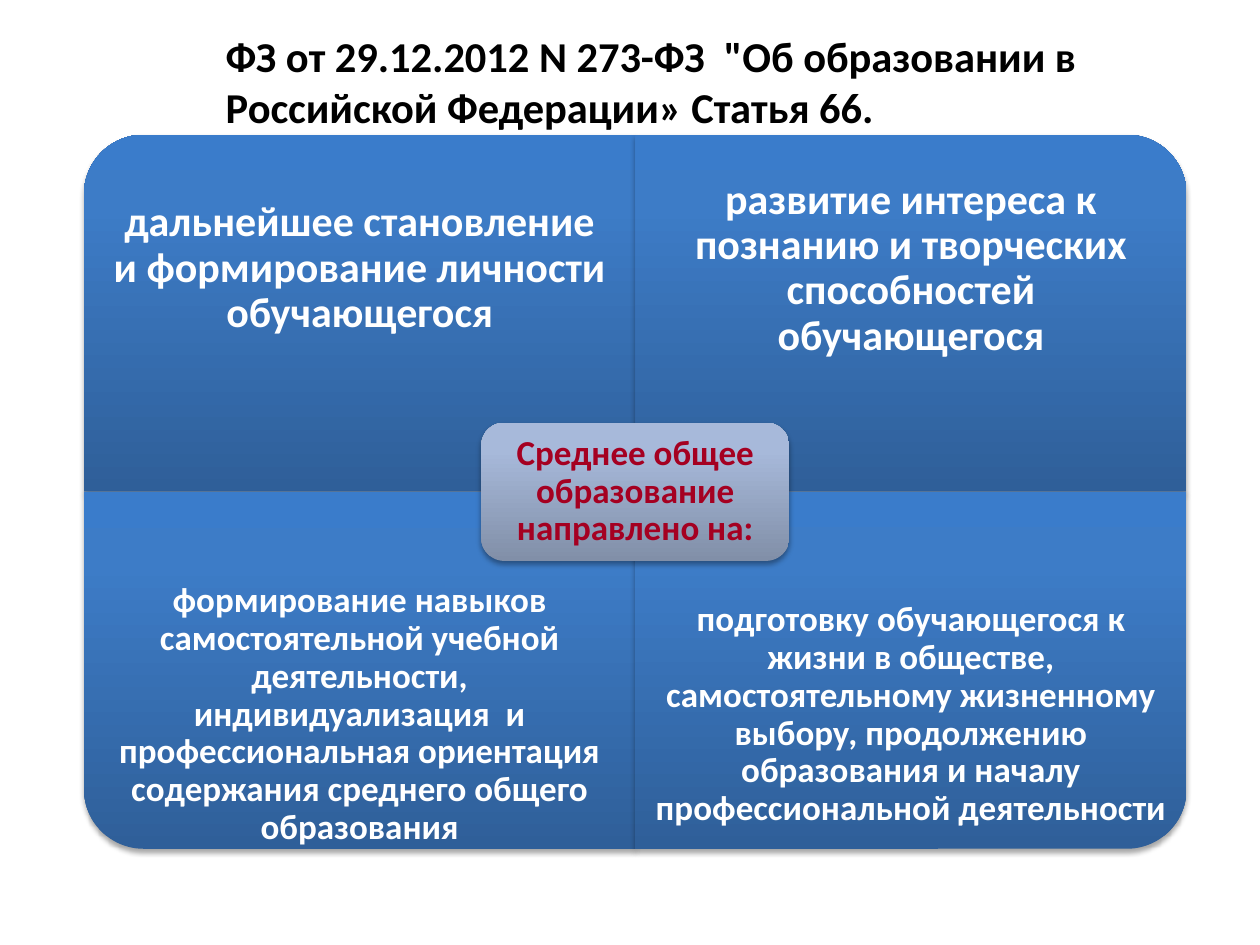
"""Build a slide on the aims of general secondary education."""
from pptx import Presentation
from pptx.dml.color import RGBColor
from pptx.enum.shapes import MSO_SHAPE as Kind
from pptx.enum.text import MSO_ANCHOR as Anchor, PP_ALIGN as Align
from pptx.oxml import parse_xml
from pptx.oxml.ns import nsdecls
from pptx.util import Pt

TITLE = 'ФЗ от 29.12.2012 N 273-ФЗ  "Об образовании в\vРоссийской Федерации» Статья 66.'
HUB = "Среднее общее образование направлено на:"
AIMS = [
    ("дальнейшее становление и формирование личности обучающегося", 24, 270),
    ("развитие интереса к познанию и творческих способностей обучающегося", 24, 0),
    ("формирование навыков самостоятельной учебной деятельности, "
     "индивидуализация  и профессиональная ориентация содержания "
     "среднего общего образования", 20, 180),
    ("подготовку обучающегося к жизни в обществе, самостоятельному "
     "жизненному выбору, продолжению образования и началу "
     "профессиональной деятельности", 20, 90),
]
BLUE = [(0, "2F5F99"), (80, "3D7CC7"), (100, "3A7CCB")]
GREY = [(0, "818FA8"), (80, "A7B9DA"), (100, "A7BADC")]
LEFT, TOP, WIDE, HIGH = 48, 77, 315, 204
HUB_W, HUB_H, HUB_GAP = 176, 79, 4


def color(code):
    return RGBColor.from_string(code)


def place(mid_x, mid_y, wide, high):
    return [Pt(n) for n in (mid_x - wide / 2, mid_y - high / 2, wide, high)]


def add_panel(kind, box, stops, turn=0):
    panel = slide.shapes.add_shape(kind, *box)
    panel.rotation = turn
    panel.line.fill.background()
    panel.shadow.inherit = False
    marks = "".join(
        f'<a:gs pos="{pos * 1000}"><a:srgbClr val="{code}"/></a:gs>'
        for pos, code in stops)
    props = panel._element.spPr
    props.insert(2, parse_xml(
        f'<a:gradFill {nsdecls("a")} rotWithShape="0"><a:gsLst>{marks}</a:gsLst>'
        '<a:lin ang="16200000" scaled="0"/></a:gradFill>'))
    props[-1].append(parse_xml(
        f'<a:outerShdw {nsdecls("a")} blurRad="{Pt(3.1)}" dist="{Pt(1.8)}" '
        'dir="5400000" rotWithShape="0"><a:srgbClr val="000000">'
        '<a:alpha val="35000"/></a:srgbClr></a:outerShdw>'))


def add_text(text, box, size, code, pad, align=Align.CENTER, gap=0.9):
    frame = slide.shapes.add_textbox(*box).text_frame
    frame.word_wrap = True
    frame.vertical_anchor = Anchor.MIDDLE
    frame.margin_left = frame.margin_right = Pt(pad)
    frame.margin_top = frame.margin_bottom = Pt(pad)
    line = frame.paragraphs[0]
    line.text = text
    line.alignment = align
    line.line_spacing = gap
    font = line.font
    font.name, font.size, font.bold = "Calibri", Pt(size), True
    font.color.rgb = color(code)


deck = Presentation()
deck.slide_width, deck.slide_height = Pt(720), Pt(540)
slide = deck.slides.add_slide(deck.slide_layouts[6])

add_text(TITLE, place(446, 46.5, 648, 90), 24.3, "000000", 7, Align.LEFT, 1.0)

for i, (text, size, turn) in enumerate(AIMS):
    row, col = divmod(i, 2)
    mid_x = LEFT + WIDE * (col + 0.5)
    mid_y = TOP + HIGH * (row + 0.5)
    sides = (HIGH, WIDE) if turn % 180 else (WIDE, HIGH)
    add_panel(Kind.ROUND_1_RECTANGLE, place(mid_x, mid_y, *sides), BLUE, turn)
    shift = HIGH / 8 * (2 * row - 1)
    box = place(mid_x, mid_y + shift, WIDE, HIGH * 0.75)
    add_text(text, box, size, "FFFFFF", size * 0.57)

hub = LEFT + WIDE, TOP + HIGH
add_panel(Kind.ROUNDED_RECTANGLE, place(*hub, HUB_W, HUB_H), GREY)
inner = place(*hub, HUB_W - 2 * HUB_GAP, HUB_H - 2 * HUB_GAP)
add_text(HUB, inner, 20, "A50021", 6)

deck.save("out.pptx")
